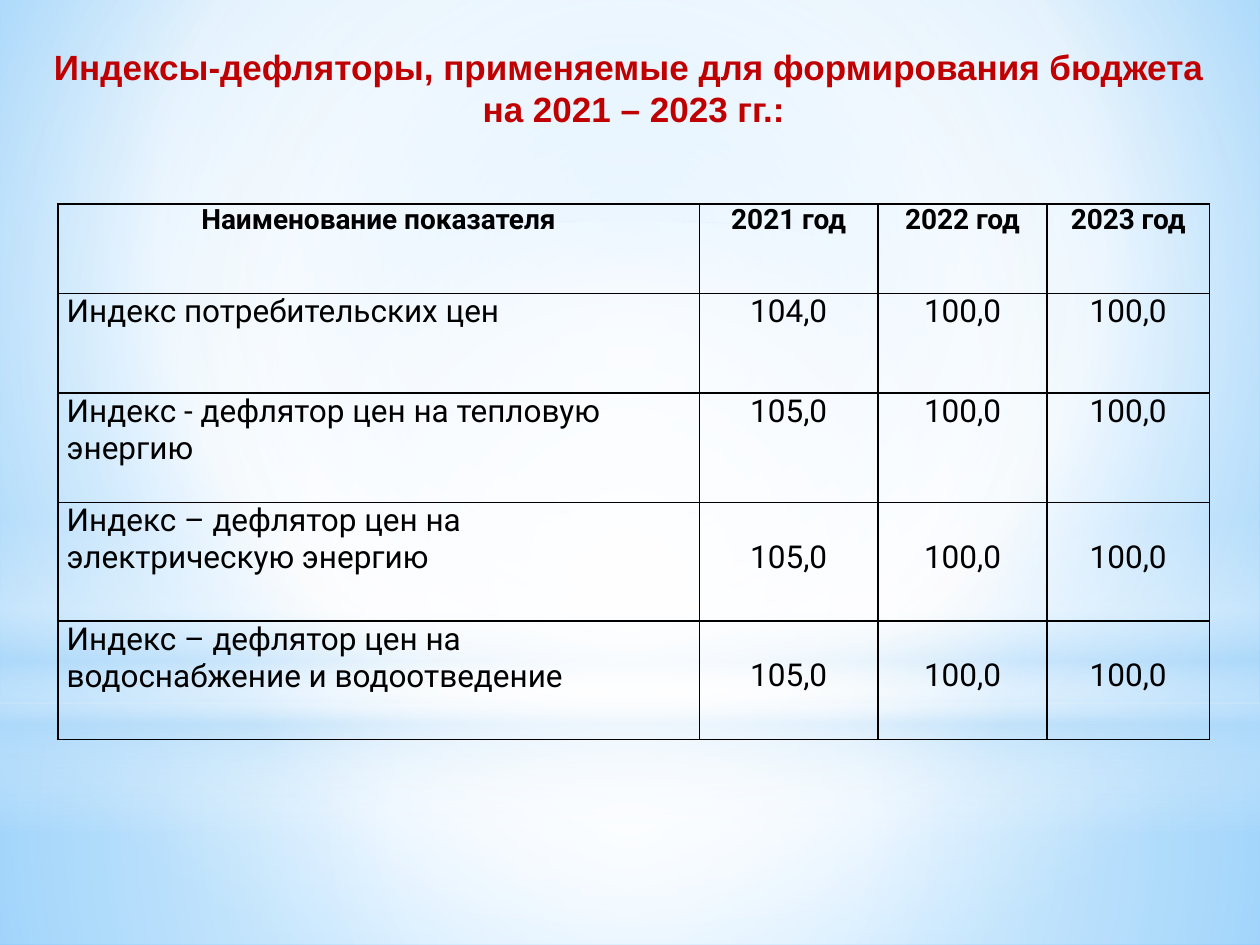
"""Builds a slide with a table of budget deflator indices."""
from dataclasses import dataclass

from lxml import etree
from pptx import Presentation
from pptx.dml.color import RGBColor
from pptx.enum.shapes import MSO_SHAPE
from pptx.enum.text import MSO_ANCHOR, MSO_AUTO_SIZE, PP_ALIGN
from pptx.oxml.ns import qn
from pptx.util import Inches, Pt

RECTANGLE, ELLIPSE = MSO_SHAPE.RECTANGLE, MSO_SHAPE.OVAL
LEFT, CENTER = PP_ALIGN.LEFT, PP_ALIGN.CENTER
MIDDLE, FIT_SHAPE = MSO_ANCHOR.MIDDLE, MSO_AUTO_SIZE.SHAPE_TO_FIT_TEXT
CENTERED_FOCUS = (50, 50, 50, 50)


@dataclass(frozen=True)
class Theme:
    title_color: str = "C00000"
    text_color: str = "000000"
    border_color: str = "000000"
    white: str = "FFFFFF"
    haze: str = "B4DCFA"
    sky: str = "9ED5FF"
    deep_sky: str = "5BB9FF"
    title_font: str = "Arial"
    table_font: str = "Roboto"
    title_size: int = 20
    header_size: int = 16
    body_size: int = 18
    border_width: int = 1


def set_attributes(target, values):
    for name, value in values.items():
        setattr(target, name, value)


def add_element(parent, tag, **attributes):
    return etree.SubElement(parent, qn(tag), {name: str(value) for name, value in attributes.items()})


class SlideBuilder:
    def __init__(self, slide, theme):
        self.slide = slide
        self.theme = theme

    def gradient(self, fill, element, stops, focus=None):
        fill.gradient()
        gradient = next(element.iter(qn("a:gradFill")))
        for child in list(gradient):
            gradient.remove(child)
        stop_list = add_element(gradient, "a:gsLst")
        for position, color, opacity in stops:
            stop = add_element(stop_list, "a:gs", pos=position * 1000)
            color_element = add_element(stop, "a:srgbClr", val=color)
            if opacity < 100:
                add_element(color_element, "a:alpha", val=opacity * 1000)
        if focus:
            circle = add_element(gradient, "a:path", path="circle")
            edges = {side: value * 1000 for side, value in zip("ltrb", focus)}
            add_element(circle, "a:fillToRect", **edges)
        else:
            add_element(gradient, "a:lin", ang=90 * 60000, scaled=0)

    def background(self, stops, focus):
        self.gradient(self.slide.background.fill, self.slide.element, stops, focus)

    def glow(self, kind, box, stops, focus=CENTERED_FOCUS):
        shape = self.slide.shapes.add_shape(kind, *map(Inches, box))
        shape.shadow.inherit = False
        shape.line.fill.background()
        self.gradient(shape.fill, shape.element, stops, focus)

    def add_text(self, paragraph, text, alignment, font, size, color, bold):
        paragraph.alignment = alignment
        run = paragraph.add_run()
        run.text = text
        set_attributes(run.font, {"name": font, "size": Pt(size), "bold": bold})
        run.font.color.rgb = RGBColor.from_string(color)

    def title(self, box, lines):
        frame = self.slide.shapes.add_textbox(*map(Inches, box)).text_frame
        set_attributes(frame, {"word_wrap": False, "vertical_anchor": MIDDLE, "auto_size": FIT_SHAPE})
        for index, line in enumerate(lines):
            paragraph = frame.add_paragraph() if index else frame.paragraphs[0]
            self.add_text(paragraph, line, CENTER, self.theme.title_font,
                          self.theme.title_size, self.theme.title_color, True)

    def border(self, cell):
        properties = cell._tc.get_or_add_tcPr()
        for side in ("a:lnL", "a:lnR", "a:lnT", "a:lnB"):
            line = add_element(properties, side, w=Pt(self.theme.border_width))
            add_element(add_element(line, "a:solidFill"), "a:srgbClr", val=self.theme.border_color)

    def table(self, left, top, widths, heights, rows, lowered_rows):
        theme = self.theme
        table = self.slide.shapes.add_table(
            len(rows), len(widths), Inches(left), Inches(top),
            Inches(sum(widths)), Inches(sum(heights))).table
        set_attributes(table, {"first_row": False, "horz_banding": False})
        for column, width in zip(table.columns, widths):
            column.width = Inches(width)
        for row_index, (row, height) in enumerate(zip(rows, heights)):
            table.rows[row_index].height = Inches(height)
            header = row_index == 0
            size = theme.header_size if header else theme.body_size
            for column_index, text in enumerate(row):
                cell = table.cell(row_index, column_index)
                lowered = column_index > 0 and row_index in lowered_rows
                set_attributes(cell, {
                    "margin_left": Inches(0.07), "margin_right": Inches(0.07),
                    "margin_top": Inches(0.29 if lowered else 0), "margin_bottom": Inches(0)})
                self.border(cell)
                cell.fill.background()
                alignment = CENTER if header or column_index else LEFT
                self.add_text(cell.text_frame.paragraphs[0], text, alignment,
                              theme.table_font, size, theme.text_color, header)


def main():
    presentation = Presentation()
    set_attributes(presentation, {"slide_width": Inches(10), "slide_height": Inches(7.5)})
    theme = Theme()
    white, haze = theme.white, theme.haze
    builder = SlideBuilder(presentation.slides.add_slide(presentation.slide_layouts[6]), theme)

    builder.background([(0, theme.sky, 100), (60, white, 100), (100, theme.deep_sky, 100)],
                       (20, 10, 20, 60))
    builder.glow(RECTANGLE, (0, 5.58, 10, 1.92), [(0, white, 91), (37, white, 76), (100, haze, 79)])
    builder.glow(RECTANGLE, (0, 0, 10, 5.58), [(0, white, 89), (48, white, 62), (100, haze, 79)])
    builder.glow(RECTANGLE, (0, 4.12, 10, 2.5),
                 [(0, white, 0), (29, white, 30), (45, haze, 40),
                  (55, white, 26), (65, haze, 60), (100, white, 0)], focus=None)
    builder.glow(ELLIPSE, (0, 1.75, 10, 5.58), [(0, white, 100), (56, white, 0)])

    rows = [
        ("Наименование показателя", "2021 год", "2022 год", "2023 год"),
        ("Индекс потребительских цен", "104,0", "100,0", "100,0"),
        ("Индекс - дефлятор цен на тепловую энергию", "105,0", "100,0", "100,0"),
        ("Индекс – дефлятор цен на электрическую энергию", "105,0", "100,0", "100,0"),
        ("Индекс – дефлятор цен на водоснабжение и водоотведение", "105,0", "100,0", "100,0"),
    ]
    builder.table(0.46, 1.62, (5.09, 1.42, 1.34, 1.29), (0.71, 0.79, 0.87, 0.94, 0.94),
                  rows, lowered_rows=(3, 4))
    builder.title((0.29, 0.31, 9.48, 0.77),
                  ("Индексы-дефляторы, применяемые для формирования бюджета ", "на 2021 – 2023 гг.:"))
    presentation.save("out.pptx")


if __name__ == "__main__":
    main()
